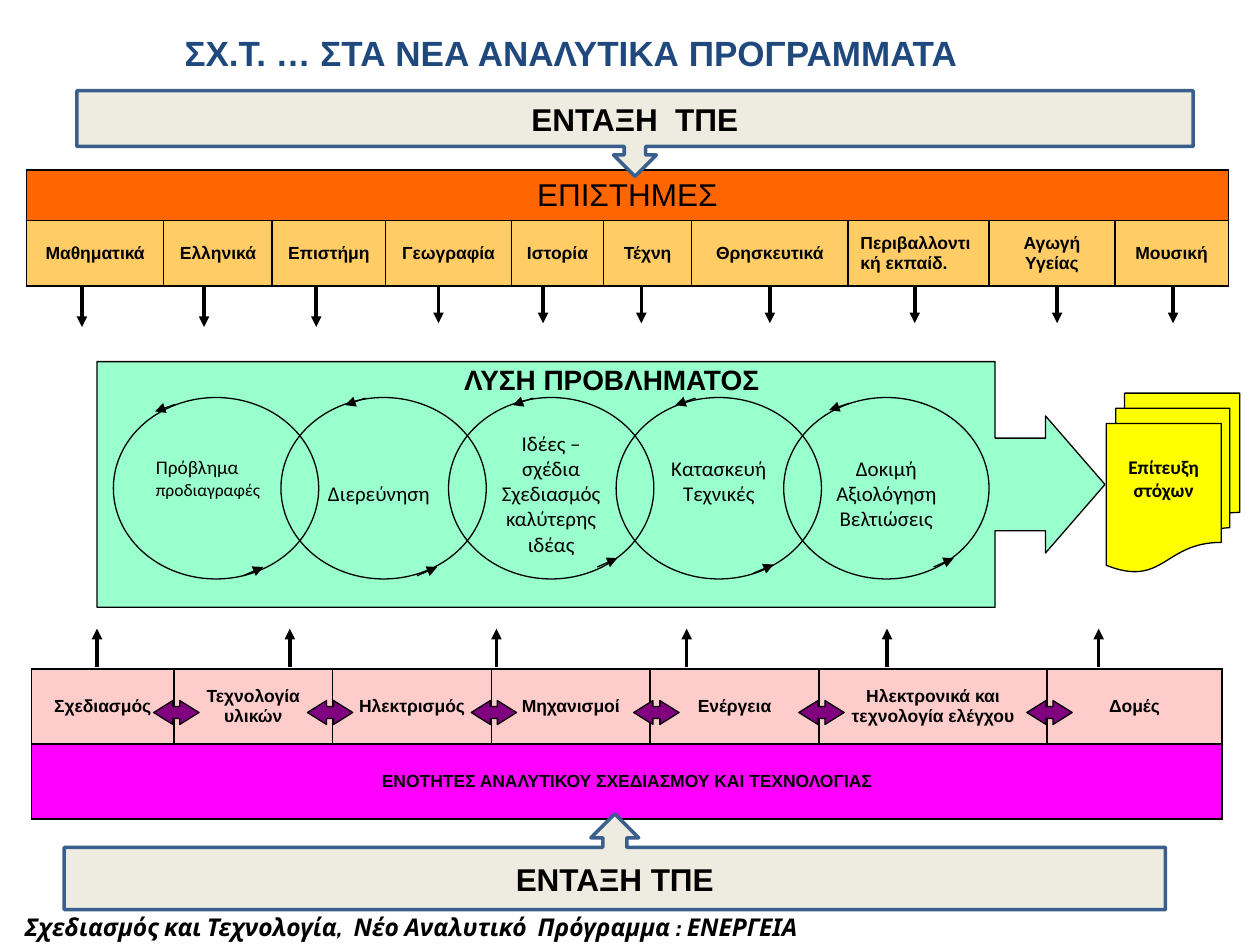
"""Build the slide on Design and Technology in the new curricula."""
import pptx
import pptx.dml.color
import pptx.enum.shapes
import pptx.enum.text
import pptx.oxml
import pptx.oxml.ns
import pptx.util

COLORS = {
    "black": "000000", "navy": "1F497D", "steel": "3A5F8C", "cream": "EEECE1",
    "yellow": "FFFF00", "mint": "99FFCC", "pink": "FFCCCC", "magenta": "FF00FF",
    "orange": "FF6600", "sand": "FFCC66", "purple": "800080",
}
RGB = {name: pptx.dml.color.RGBColor.from_string(h) for name, h in COLORS.items()}
MSO = pptx.enum.shapes.MSO_SHAPE
LEFT, CENTER = pptx.enum.text.PP_ALIGN.LEFT, pptx.enum.text.PP_ALIGN.CENTER
TOP, MIDDLE = pptx.enum.text.MSO_ANCHOR.TOP, pptx.enum.text.MSO_ANCHOR.MIDDLE
NS = pptx.oxml.ns.nsdecls("a")

prs = pptx.Presentation()
prs.slide_width, prs.slide_height = pptx.util.Inches(10), pptx.util.Inches(7.5)
s = prs.slides.add_slide(prs.slide_layouts[6])
COLS = 100
unit = prs.slide_width // COLS


def write(tf, paragraphs, align=CENTER, font="Arial", bold=False, italic=False, color="black"):
    for i, runs in enumerate(paragraphs):
        p = tf.add_paragraph() if i else tf.paragraphs[0]
        p.alignment = align
        for text, size in runs:
            r = p.add_run()
            r.text = text
            r.font.size = pptx.util.Pt(size)
            r.font.name = font
            r.font.bold, r.font.italic = bold, italic
            r.font.color.rgb = RGB[color]


def add_box(kind, box, fill=None, line="black", width=0.75, anchor=TOP, left=1, top=0.5, adj=()):
    area = [round(v * unit) for v in box]
    if kind is None:
        sp = s.shapes.add_textbox(*area)
    else:
        sp = s.shapes.add_shape(kind, *area)
        sp.shadow.inherit = False
        sp.line.color.rgb = RGB[line]
        sp.line.width = pptx.util.Pt(width)
        for i, value in enumerate(adj):
            sp.adjustments[i] = value
        if fill:
            sp.fill.solid()
            sp.fill.fore_color.rgb = RGB[fill]
        else:
            sp.fill.background()
    tf = sp.text_frame
    tf.word_wrap = True
    tf.vertical_anchor = anchor
    tf.margin_left, tf.margin_top = round(left * unit), round(top * unit)
    return tf


goals = add_box(MSO.FLOWCHART_MULTIDOCUMENT, (87.8, 31.2, 10.6, 14.2), "yellow", top=2.5)
write(goals, [[("Επίτευξη στόχων", 11)]], font="Calibri", bold=True)

add_box(MSO.RIGHT_ARROW_CALLOUT, (7.7, 28.7, 80, 19.5), "mint", adj=(0.377, 0.279, 0.242, 0.891))
steps = [
    ([[("Πρόβλημα ", 11), ("προδιαγραφές", 10)]], LEFT, 1, 2.5),
    ([[("Διερεύνηση", 12)]], LEFT, 1.35, 4.5),
    ([[("Ιδέες – σχέδια", 12)], [("Σχεδιασμός καλύτερης ιδέας", 12)]], CENTER, 1, 0.5),
    ([[("Κατασκευή Τεχνικές", 12)]], CENTER, 1, 2.5),
    ([[("Δοκιμή Αξιολόγηση Βελτιώσεις", 12)]], CENTER, 1, 2.5),
]
for i, (paragraphs, align, left, top) in enumerate(steps):
    tf = add_box(MSO.OVAL, (9 + 13.3 * i, 31.55, 16.3, 14.4), None if i else "mint", left=left, top=top)
    write(tf, paragraphs, align, "Calibri")

arrow_groups = [
    (2, 0, 3.35, [(x, 22.6) for x in (6.5, 16.2, 25.1)]),
    (2, 0, 3.35, [(x, 22.3) for x in (34.8, 43.1, 50.9, 61.1, 72.6, 83.9, 93.1)]),
    (2, 0, -3, [(x, 52.9) for x in (7.7, 23, 39.4, 54.5, 70.4, 87.2)]),
    (0.75, -1.6, 0.55, [(13.9, 32.1), (29, 31.6), (42.3, 31.6), (55.2, 31.6), (67.4, 32)]),
    (0.75, 1.6, -0.7, [(19.3, 45.7), (33.1, 45.7), (47.4, 45), (59.8, 45.5), (74.1, 45)]),
]
for width, dx, dy, starts in arrow_groups:
    for x, y in starts:
        ends = [round(v * unit) for v in (x, y, x + dx, y + dy)]
        cx = s.shapes.add_connector(pptx.enum.shapes.MSO_CONNECTOR.STRAIGHT, *ends)
        cx.line.color.rgb = RGB["black"]
        cx.line.width = pptx.util.Pt(width)
        cx.line._get_or_add_ln().append(pptx.oxml.parse_xml(f'<a:tailEnd {NS} type="triangle"/>'))
        cx._element.spPr.append(pptx.oxml.parse_xml(f"<a:effectLst {NS}/>"))

units = ["Σχεδιασμός", "Τεχνολογία υλικών", "Ηλεκτρισμός", "Μηχανισμοί", "Ενέργεια",
         "Ηλεκτρονικά και τεχνολογία ελέγχου", "Δομές"]
subjects = ["Μαθηματικά", "Ελληνικά", "Επιστήμη", "Γεωγραφία", "Ιστορία", "Τέχνη",
            "Θρησκευτικά", "Περιβαλλοντική εκπαίδ.", "Αγωγή Υγείας", "Μουσική"]
tables = [
    (2.5, 53.1, [11.3, 12.6, 12.6, 12.6, 13.4, 18.1, 13.9], [5.95, 5.95], units, "pink", 1,
     "ΕΝΟΤΗΤΕΣ ΑΝΑΛΥΤΙΚΟΥ ΣΧΕΔΙΑΣΜΟΥ ΚΑΙ ΤΕΧΝΟΛΟΓΙΑΣ", "magenta", 10, True),
    (2.1, 13.5, [10.9, 8.6, 9, 10, 7.3, 7, 12.4, 11.2, 10, 9], [4, 5.2], subjects, "sand", 0,
     "ΕΠΙΣΤΗΜΕΣ", "orange", 18, False),
]
for x, y, widths, heights, names, fill, band, heading, band_fill, size, bold in tables:
    area = [round(v * unit) for v in (x, y, sum(widths), sum(heights))]
    tbl = s.shapes.add_table(2, len(widths), *area).table
    tbl.first_row = tbl.horz_banding = False
    for column, width in zip(tbl.columns, widths):
        column.width = round(width * unit)
    for row, height in zip(tbl.rows, heights):
        row.height = round(height * unit)
    for cell in tbl.iter_cells():
        for side in ("lnL", "lnR", "lnT", "lnB"):
            cell._tc.get_or_add_tcPr().append(pptx.oxml.parse_xml(
                f'<a:{side} {NS} w="12700"><a:solidFill><a:srgbClr val="{COLORS["black"]}"/>'
                f"</a:solidFill></a:{side}>"))
        cell.fill.solid()
        cell.fill.fore_color.rgb = RGB[fill]
        cell.vertical_anchor = MIDDLE
    for i, name in enumerate(names):
        align = LEFT if name.startswith("Περιβ") else CENTER
        write(tbl.cell(1 - band, i).text_frame, [[(name, 10)]], align, bold=True)
    title_cell = tbl.cell(band, 0)
    title_cell.merge(tbl.cell(band, len(widths) - 1))
    title_cell.fill.fore_color.rgb = RGB[band_fill]
    write(title_cell.text_frame, [[(heading, size)]], bold=bold)

for x in (12.2, 24.4, 37.4, 50.3, 63.4, 81.5):
    add_box(MSO.LEFT_RIGHT_ARROW, (x, 55.6, 3.6, 1.9), "purple", adj=(0.5, 0.8))

for kind, box, text in [
    (MSO.DOWN_ARROW_CALLOUT, (6.1, 7.2, 88.6, 6.8), "ΕΝΤΑΞΗ  ΤΠΕ"),
    (MSO.UP_ARROW_CALLOUT, (5.1, 64.6, 87.4, 7.6), "ΕΝΤΑΞΗ ΤΠΕ"),
]:
    write(add_box(kind, box, "cream", "steel", 2, MIDDLE), [[(text, 18)]], bold=True)

write(add_box(None, (31.6, 28.3, 33.9, 3.2)), [[("ΛΥΣΗ ΠΡΟΒΛΗΜΑΤΟΣ", 16)]], bold=True)
write(add_box(None, (12.9, 2, 72.7, 4.4), left=1.75),
      [[("ΣΧ.Τ. … ΣΤΑ ΝΕΑ ΑΝΑΛΥΤΙΚΑ ΠΡΟΓΡΑΜΜΑΤΑ", 20)]], LEFT, bold=True, color="navy")
write(add_box(None, (1, 71.9, 75.6, 3.4)),
      [[("Σχεδιασμός και Τεχνολογία,  Νέο Αναλυτικό  Πρόγραμμα : ΕΝΕΡΓΕΙΑ", 14)]],
      LEFT, "Cabin", bold=True, italic=True)

prs.save("out.pptx")
